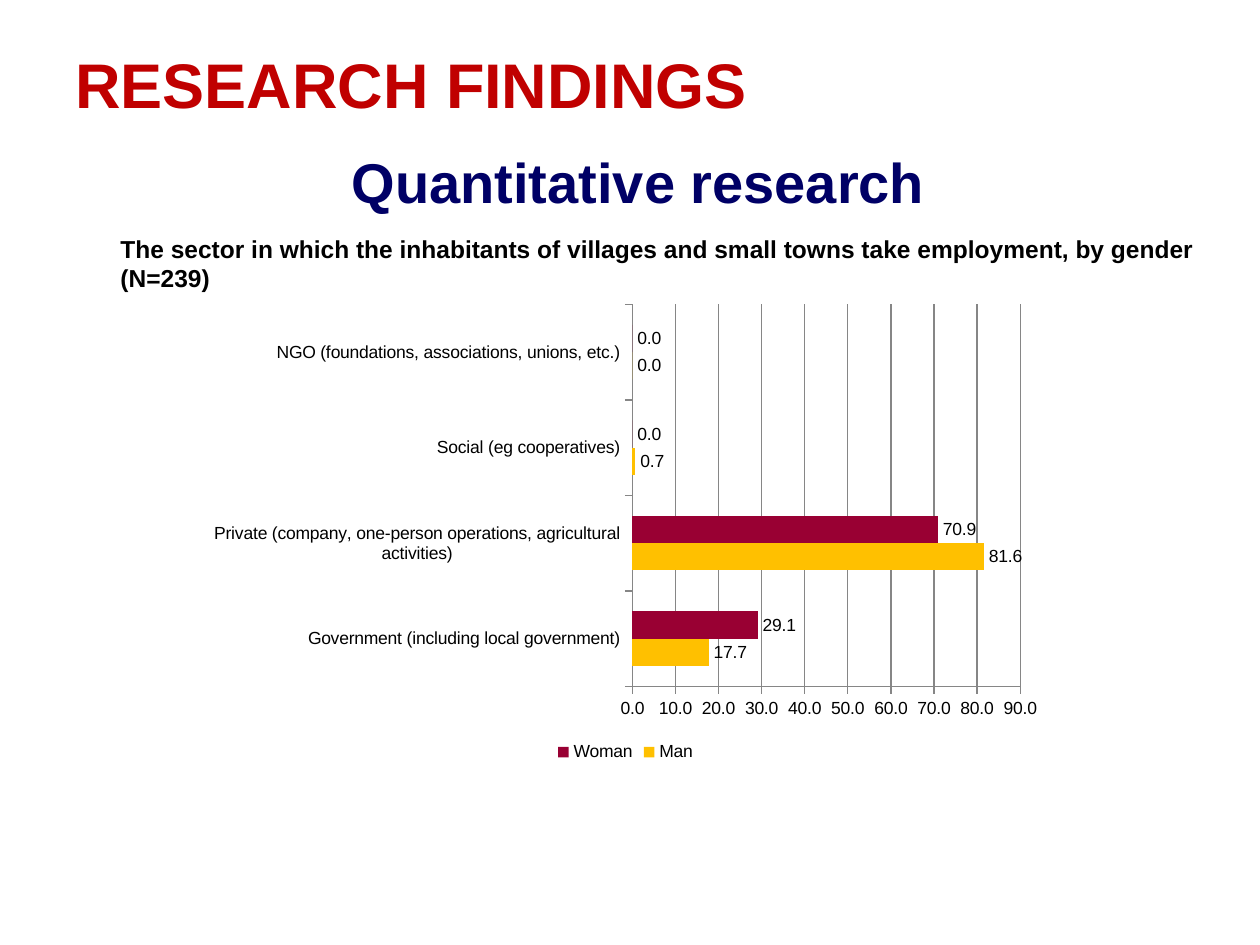
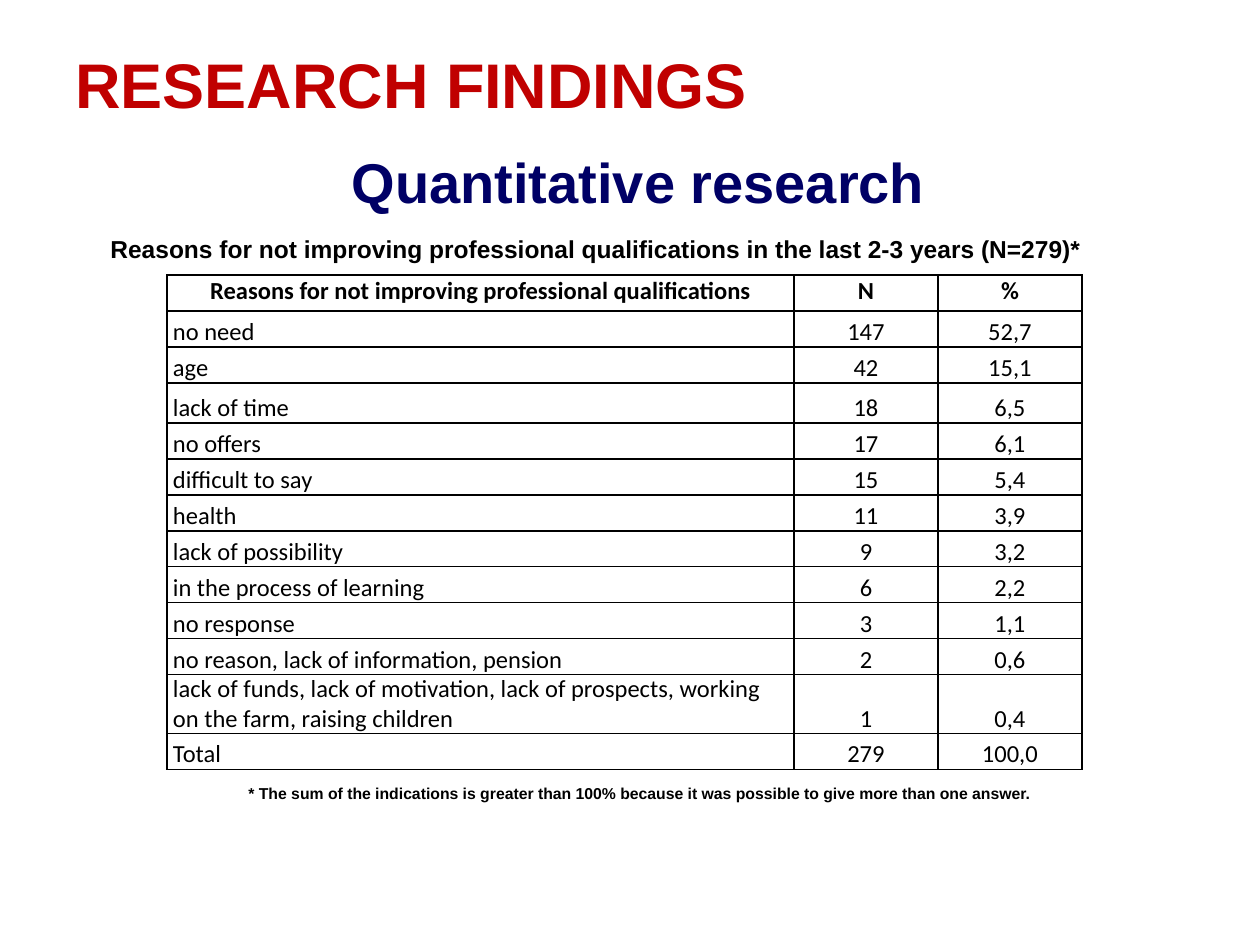
import pptx
import pptx.chart.data
import pptx.dml.color
import pptx.enum.chart
import pptx.enum.text
import pptx.oxml
import pptx.oxml.ns
import pptx.util

# Content
TITLE = "RESEARCH FINDINGS"
SUBTITLE = "Quantitative research"
SECTOR_CAPTION = ("The sector in which the inhabitants of villages and small towns "
                  "take employment, by gender (N=239)")
SECTORS = [
    "Government (including local government)",
    "Private (company, one-person operations, agricultural activities)",
    "Social (eg cooperatives)",
    "NGO (foundations, associations, unions, etc.)",
]
GENDERS = [("Man", [17.7, 81.6, 0.7, 0], "gold"),
           ("Woman", [29.1, 70.9, 0, 0], "maroon")]
REASON_CAPTION = ("Reasons for not improving professional qualifications "
                  "in the last 2-3 years (N=279)*")
REASONS = [
    ("Reasons for not improving professional qualifications", "N", "%"),
    ("no need", "147", "52,7"),
    ("age", "42", "15,1"),
    ("lack of time", "18", "6,5"),
    ("no offers", "17", "6,1"),
    ("difficult to say", "15", "5,4"),
    ("health", "11", "3,9"),
    ("lack of possibility", "9", "3,2"),
    ("in the process of learning", "6", "2,2"),
    ("no response", "3", "1,1"),
    ("no reason, lack of information, pension", "2", "0,6"),
    ("lack of funds, lack of motivation, lack of prospects, working on the farm, "
     "raising children", "1", "0,4"),
    ("Total", "279", "100,0"),
]
FOOTNOTE = ("* The sum of the indications is greater than 100% because it was "
            "possible to give more than one answer.")

# Style
COLORS = {"red": "C00000", "navy": "000066", "black": "000000", "white": "FFFFFF",
          "gold": "FFC000", "maroon": "990033", "grid": "868686"}
COLUMN_WIDTHS = (627, 144, 144)
ROW_HEIGHT, TALL_ROWS = 36, {3: 40, 11: 58}
ALIGN = pptx.enum.text.PP_ALIGN
ANCHOR = pptx.enum.text.MSO_ANCHOR


def px(n):
    return pptx.util.Emu(round(n * 914400 / 126))


def color(name):
    return pptx.dml.color.RGBColor.from_string(COLORS[name])


def style_font(font, size, name="Arial", fill="black", bold=False):
    font.size, font.name, font.bold = pptx.util.Pt(size), name, bold
    font.color.rgb = color(fill)


def add_text(s, box, text, size, fill="black", align=ALIGN.LEFT):
    tf = s.shapes.add_textbox(*map(px, box)).text_frame
    tf.word_wrap = True
    tf.vertical_anchor = ANCHOR.MIDDLE
    p = tf.paragraphs[0]
    p.alignment = align
    r = p.add_run()
    r.text = text
    style_font(r.font, size, fill=fill, bold=True)


def add_findings_slide(prs):
    s = prs.slides.add_slide(prs.slide_layouts[6])
    add_text(s, (63, 38, 1134, 91), TITLE, 36, "red")
    add_text(s, (108, 147, 1061, 69), SUBTITLE, 32, "navy", ALIGN.CENTER)
    return s


def add_sector_chart(s, box):
    data = pptx.chart.data.CategoryChartData(number_format="0.0")
    data.categories = SECTORS
    for name, values, _ in GENDERS:
        data.add_series(name, values)
    kind = pptx.enum.chart.XL_CHART_TYPE.BAR_CLUSTERED
    chart = s.shapes.add_chart(kind, *map(px, box), data).chart
    style_font(chart.font, 10)
    chart.has_title = False
    chart.has_legend = True
    chart.legend.position = pptx.enum.chart.XL_LEGEND_POSITION.BOTTOM
    chart.legend.include_in_layout = False

    # Bars and value labels
    plot = chart.plots[0]
    plot.vary_by_categories = False
    plot.gap_width = 150
    plot.has_data_labels = True
    labels = plot.data_labels
    labels.show_value = True
    labels.number_format, labels.number_format_is_linked = "0.0", False
    labels.position = pptx.enum.chart.XL_LABEL_POSITION.OUTSIDE_END
    for series, (_, _, fill) in zip(plot.series, GENDERS):
        series.format.fill.solid()
        series.format.fill.fore_color.rgb = color(fill)

    # Axes
    axis = chart.value_axis
    axis.minimum_scale, axis.maximum_scale, axis.major_unit = 0, 90, 10
    axis.tick_labels.number_format = "0.0"
    axis.tick_labels.number_format_is_linked = False
    axis.has_major_gridlines = True
    for line in (axis.major_gridlines.format.line, axis.format.line,
                 chart.category_axis.format.line):
        line.color.rgb = color("grid")
        line.width = pptx.util.Pt(0.75)


def add_borders(cell):
    tcPr = cell._tc.get_or_add_tcPr()
    for i, side in enumerate(("lnL", "lnR", "lnT", "lnB")):
        tcPr.insert(i, pptx.oxml.parse_xml(
            f'<a:{side} {pptx.oxml.ns.nsdecls("a")} w="12700"><a:solidFill>'
            f'<a:srgbClr val="{COLORS["black"]}"/></a:solidFill></a:{side}>'))


def fill_cell(cell, text, header, centered):
    cell.fill.solid()
    cell.fill.fore_color.rgb = color("white")
    cell.margin_left = cell.margin_right = px(6)
    cell.margin_top = cell.margin_bottom = 0
    cell.vertical_anchor = ANCHOR.MIDDLE if header else ANCHOR.BOTTOM
    p = cell.text_frame.paragraphs[0]
    if centered:
        p.alignment = ALIGN.CENTER
        p.line_spacing = pptx.util.Pt(15)
    r = p.add_run()
    r.text = text
    style_font(r.font, 14, "Calibri", bold=header)
    add_borders(cell)


def add_reason_table(s, left, top):
    heights = [TALL_ROWS.get(i, ROW_HEIGHT) for i in range(len(REASONS))]
    box = (left, top, sum(COLUMN_WIDTHS), sum(heights))
    table = s.shapes.add_table(len(REASONS), len(COLUMN_WIDTHS), *map(px, box)).table
    for column, width in zip(table.columns, COLUMN_WIDTHS):
        column.width = px(width)
    for i, values in enumerate(REASONS):
        table.rows[i].height = px(heights[i])
        for j, text in enumerate(values):
            fill_cell(table.cell(i, j), text, i == 0, i == 0 or j > 0)


def main():
    prs = pptx.Presentation()
    prs.slide_width, prs.slide_height = px(1260), px(945)

    # Employment sector by gender
    s = add_findings_slide(prs)
    add_text(s, (108, 227, 1102, 72), SECTOR_CAPTION, 14)
    add_sector_chart(s, (197, 295, 857, 472))

    # Reasons for not improving qualifications
    s = add_findings_slide(prs)
    add_text(s, (98, 227, 1082, 43), REASON_CAPTION, 14)
    add_reason_table(s, 167, 275)
    add_text(s, (236, 777, 827, 32), FOOTNOTE, 9)

    prs.save("out.pptx")


if __name__ == "__main__":
    main()
